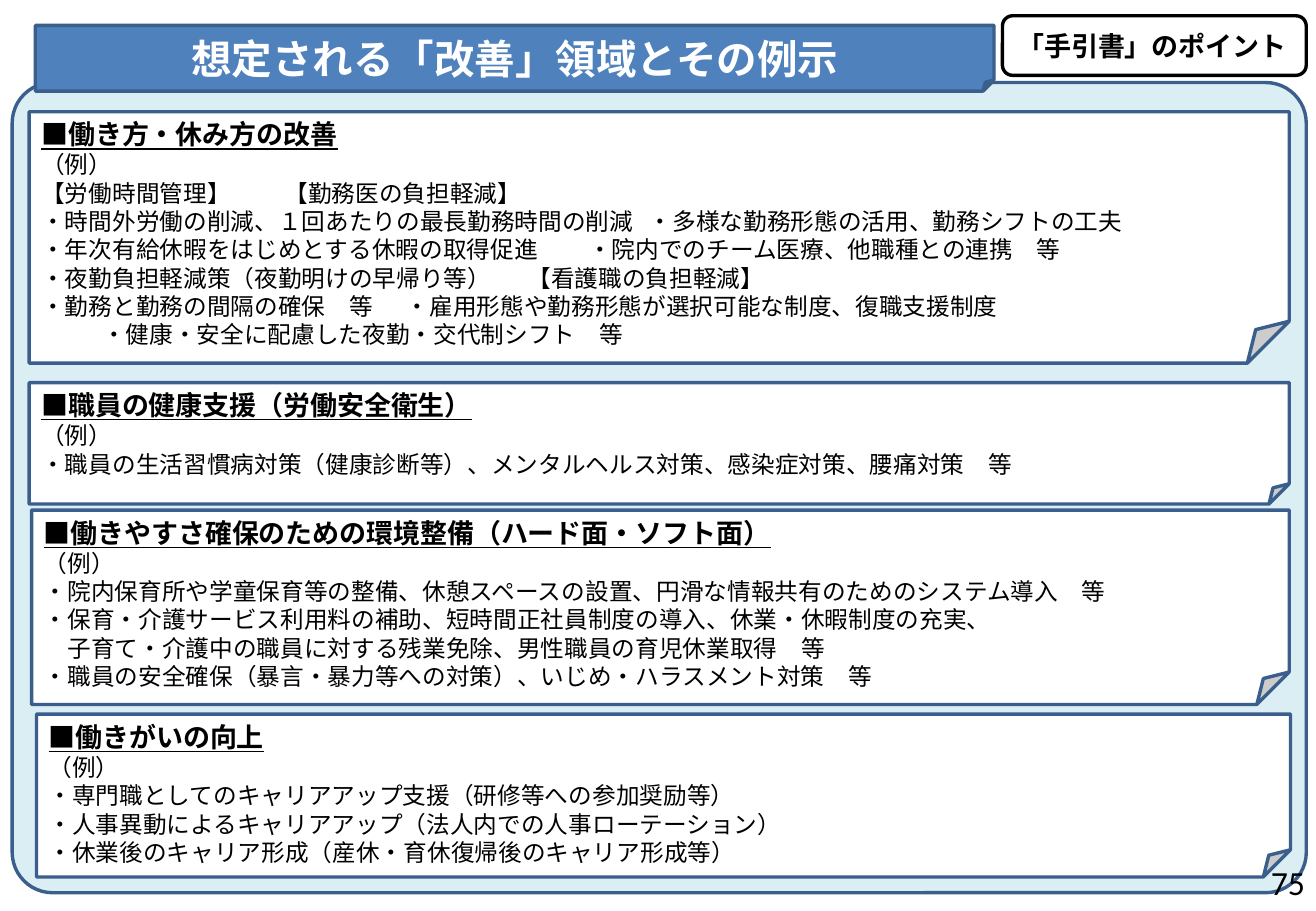
from lxml.etree import SubElement
from pptx import Presentation
from pptx.dml.color import RGBColor
from pptx.enum.shapes import MSO_SHAPE
from pptx.enum.text import MSO_ANCHOR, MSO_AUTO_SIZE, PP_ALIGN
from pptx.oxml.ns import qn
from pptx.util import Inches, Pt

COLOURS = {"backdrop": "DBEEF4", "banner": "4F81BD", "border": "3A5F8C",
           "white": "FFFFFF", "black": "000000"}
JAPANESE_FONT = "Noto Sans CJK JP"
COMPARISON_LAYOUT = 4  # a title and four bodies
LINE_HEIGHT = 1.2
BRACKET_TAB, POINT_TAB = 4.86, 5.06

# Each section: box, heading, lines. A line with a second column is
# (left text, right text, tab position).
SECTIONS = [
    ((0.24, 0.92, 10.37, 2.07), "■働き方・休み方の改善", [
        "（例）",
        ("【労働時間管理】", "【勤務医の負担軽減】", BRACKET_TAB),
        ("・時間外労働の削減、１回あたりの最長勤務時間の削減",
         "・多様な勤務形態の活用、勤務シフトの工夫", POINT_TAB),
        ("・年次有給休暇をはじめとする休暇の取得促進",
         "・院内でのチーム医療、他職種との連携　等", POINT_TAB),
        ("・夜勤負担軽減策（夜勤明けの早帰り等）", "【看護職の負担軽減】", BRACKET_TAB),
        ("・勤務と勤務の間隔の確保　等",
         "・雇用形態や勤務形態が選択可能な制度、復職支援制度", POINT_TAB),
        ("", "・健康・安全に配慮した夜勤・交代制シフト　等", POINT_TAB),
    ]),
    ((0.24, 3.15, 10.37, 1.0), "■職員の健康支援（労働安全衛生）", [
        "（例）",
        "・職員の生活習慣病対策（健康診断等）、メンタルヘルス対策、感染症対策、腰痛対策　等",
    ]),
    ((0.26, 4.2, 10.35, 1.6), "■働きやすさ確保のための環境整備（ハード面・ソフト面）", [
        "（例）",
        "・院内保育所や学童保育等の整備、休憩スペースの設置、円滑な情報共有のためのシステム導入　等",
        "・保育・介護サービス利用料の補助、短時間正社員制度の導入、休業・休暇制度の充実、",
        "　子育て・介護中の職員に対する残業免除、男性職員の育児休業取得　等",
        "・職員の安全確保（暴言・暴力等への対策）、いじめ・ハラスメント対策　等",
    ]),
    ((0.3, 5.88, 10.32, 1.34), "■働きがいの向上", [
        "（例）",
        "・専門職としてのキャリアアップ支援（研修等への参加奨励等）",
        "・人事異動によるキャリアアップ（法人内での人事ローテーション）",
        "・休業後のキャリア形成（産休・育休復帰後のキャリア形成等）",
    ]),
]


def colour(name):
    return RGBColor.from_string(COLOURS[name])


def add_panel(slide, preset, box, fill="white", line="border", adjustments=()):
    shape = slide.shapes.add_shape(preset, *map(Inches, box))
    shape.shadow.inherit = False
    shape.fill.solid()
    shape.fill.fore_color.rgb = colour(fill)
    shape.line.color.rgb = colour(line)
    shape.line.width = Pt(2)
    for index, value in enumerate(adjustments):
        shape.adjustments[index] = value
    return shape


def place_on_top(slide, placeholder, box):
    placeholder.left, placeholder.top, placeholder.width, placeholder.height = map(Inches, box)
    slide.shapes._spTree.append(placeholder._element)


def prepare_frame(shape, anchor):
    frame = shape.text_frame
    frame.word_wrap = True
    frame.auto_size = MSO_AUTO_SIZE.NONE
    frame.vertical_anchor = anchor
    frame.margin_left = frame.margin_right = Inches(0.1)
    frame.margin_top = frame.margin_bottom = Inches(0.05)
    return frame


def write(paragraph, text, size, font=JAPANESE_FONT, ink="black", bold=False,
          underline=False, align=PP_ALIGN.LEFT, tab=None):
    paragraph.alignment = align
    paragraph.space_before = paragraph.space_after = Pt(0)
    paragraph.line_spacing = Pt(size * LINE_HEIGHT)
    properties = paragraph._p.get_or_add_pPr()
    properties.set("marL", "0")
    properties.set("indent", "0")
    SubElement(properties, qn("a:buNone"))
    if tab:
        stops = SubElement(properties, qn("a:tabLst"))
        SubElement(stops, qn("a:tab"), pos=str(Inches(tab)), algn="l")
    run = paragraph.add_run()
    run.text = text
    run.font.size = Pt(size)
    run.font.bold = bold
    run.font.underline = underline
    run.font.color.rgb = colour(ink)
    run.font.name = font
    SubElement(run._r.get_or_add_rPr(), qn("a:ea"), typeface=font)


def add_banner(slide, box):
    add_panel(slide, MSO_SHAPE.FOLDED_CORNER, box, fill="banner")
    title = slide.shapes.title
    place_on_top(slide, title, box)
    frame = prepare_frame(title, MSO_ANCHOR.MIDDLE)
    write(frame.paragraphs[0], "想定される「改善」領域とその例示", 24,
          ink="white", bold=True, align=PP_ALIGN.CENTER)


def add_section(slide, body, box, heading, lines):
    add_panel(slide, MSO_SHAPE.FOLDED_CORNER, box)
    place_on_top(slide, body, box)
    frame = prepare_frame(body, MSO_ANCHOR.TOP)
    write(frame.paragraphs[0], heading, 16, bold=True, underline=True)
    for line in lines:
        if isinstance(line, tuple):
            left, right, tab = line
            write(frame.add_paragraph(), f"{left}\t{right}", 14, tab=tab)
        else:
            write(frame.add_paragraph(), line, 14)


def add_callout(slide, box):
    callout = add_panel(slide, MSO_SHAPE.ROUNDED_RECTANGULAR_CALLOUT, box,
                        line="black", adjustments=(-0.5, -0.12, 0.17))
    frame = prepare_frame(callout, MSO_ANCHOR.MIDDLE)
    write(frame.paragraphs[0], "「手引書」のポイント", 16, bold=True)


def add_page_number(slide, box):
    number = slide.shapes.add_textbox(*map(Inches, box))
    frame = prepare_frame(number, MSO_ANCHOR.MIDDLE)
    write(frame.paragraphs[0], "75", 20, font="Calibri", align=PP_ALIGN.RIGHT)


def main():
    presentation = Presentation()
    presentation.slide_width = Inches(10.83)
    presentation.slide_height = Inches(7.5)
    slide = presentation.slides.add_slide(presentation.slide_layouts[COMPARISON_LAYOUT])
    bodies = list(slide.placeholders)[1:]

    add_panel(slide, MSO_SHAPE.ROUNDED_RECTANGLE, (0.1, 0.68, 10.65, 6.67),
              fill="backdrop", adjustments=(0.05,))
    add_banner(slide, (0.29, 0.21, 7.89, 0.54))
    for body, section in zip(bodies, SECTIONS):
        add_section(slide, body, *section)
    add_callout(slide, (8.25, 0.13, 2.5, 0.49))
    add_page_number(slide, (8.31, 7.06, 2.53, 0.4))
    presentation.save("out.pptx")


if __name__ == "__main__":
    main()
